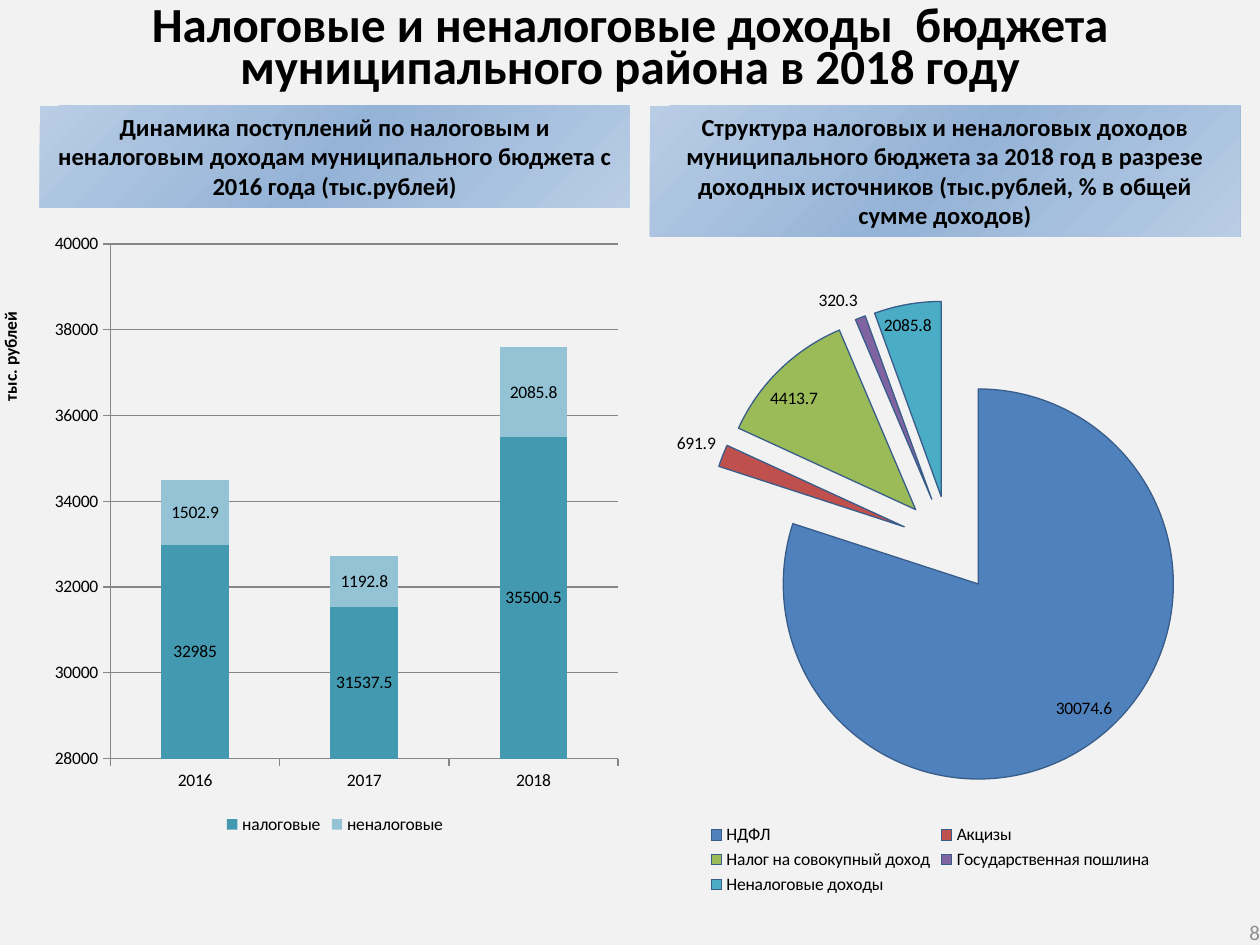
from lxml import etree
from pptx import Presentation
from pptx.chart.data import CategoryChartData
from pptx.dml.color import RGBColor
from pptx.enum.chart import XL_CHART_TYPE, XL_LABEL_POSITION, XL_LEGEND_POSITION, XL_TICK_MARK
from pptx.enum.shapes import MSO_SHAPE
from pptx.enum.text import MSO_ANCHOR, PP_ALIGN
from pptx.oxml import parse_xml
from pptx.oxml.ns import nsdecls, qn
from pptx.util import Cm, Pt

STACKED = XL_CHART_TYPE.COLUMN_STACKED
PIE = XL_CHART_TYPE.PIE
BEST_FIT = XL_LABEL_POSITION.BEST_FIT
LEGEND_BOTTOM = XL_LEGEND_POSITION.BOTTOM
TICK_OUTSIDE = XL_TICK_MARK.OUTSIDE
RECTANGLE = MSO_SHAPE.RECTANGLE
TOP, MIDDLE = MSO_ANCHOR.TOP, MSO_ANCHOR.MIDDLE
CENTER, RIGHT = PP_ALIGN.CENTER, PP_ALIGN.RIGHT

FONT = "Calibri"
BLACK = RGBColor(0x00, 0x00, 0x00)
BACKGROUND = RGBColor(0xF2, 0xF2, 0xF2)
PAGE_GREY = RGBColor(0x8C, 0x8C, 0x8C)
AXIS_GREY = RGBColor(0x86, 0x86, 0x86)
TAX_TEAL = RGBColor(0x43, 0x99, 0xB0)
NON_TAX_TEAL = RGBColor(0x93, 0xC3, 0xD5)
PIE_OUTLINE = RGBColor(0x38, 0x5D, 0x8A)
PIE_COLORS = (
    RGBColor(0x4F, 0x81, 0xBD),
    RGBColor(0xC0, 0x50, 0x4D),
    RGBColor(0x9B, 0xBB, 0x59),
    RGBColor(0x80, 0x64, 0xA2),
    RGBColor(0x4B, 0xAC, 0xC6),
)
BAND_LIGHT = RGBColor(0xB9, 0xCD, 0xE5)
BAND_DARK = RGBColor(0x95, 0xB3, 0xD7)

YEARS = ("2016", "2017", "2018")
INCOME_BY_YEAR = (
    ("налоговые", (32985, 31537.5, 35500.5), TAX_TEAL),
    ("неналоговые", (1502.9, 1192.8, 2085.8), NON_TAX_TEAL),
)
INCOME_BY_SOURCE = {
    "НДФЛ": 30074.6,
    "Акцизы": 691.9,
    "Налог на совокупный доход": 4413.7,
    "Государственная пошлина": 320.3,
    "Неналоговые доходы": 2085.8,
}


def write_text(shape, text, size, color=BLACK, bold=True, alignment=CENTER, anchor=TOP):
    frame = shape.text_frame
    frame.word_wrap = True
    frame.vertical_anchor = anchor
    paragraph = frame.paragraphs[0]
    paragraph.text = text
    paragraph.alignment = alignment
    paragraph.font.name = FONT
    paragraph.font.size = Pt(size)
    paragraph.font.bold = bold
    paragraph.font.color.rgb = color
    return paragraph


def remove_margins(shape):
    frame = shape.text_frame
    frame.margin_left = frame.margin_right = frame.margin_top = frame.margin_bottom = 0


def add_title(slide, left, top, width, height):
    title = slide.shapes.add_textbox(left, top, width, height)
    title.text_frame.margin_top = Cm(0.2)
    paragraph = write_text(title, "Налоговые и неналоговые доходы  бюджета муниципального района в 2018 году", 28)
    paragraph.line_spacing = Pt(24)


def add_heading(slide, text, left, top, width, height):
    band = slide.shapes.add_shape(RECTANGLE, left, top, width, height)
    band.shadow.inherit = False
    band.line.fill.background()
    stops = "".join(
        f'<a:gs pos="{position}"><a:srgbClr val="{color}"/></a:gs>'
        for position, color in ((0, BAND_LIGHT), (50000, BAND_DARK), (100000, BAND_LIGHT))
    )
    gradient = parse_xml(
        f'<a:gradFill {nsdecls("a")}><a:gsLst>{stops}</a:gsLst>'
        '<a:path path="circle"><a:fillToRect l="100000" t="100000"/></a:path></a:gradFill>'
    )
    band.fill.background()
    properties = band.element.spPr
    properties.replace(properties.find(qn("a:noFill")), gradient)
    write_text(band, text, 14)


def add_unit_label(slide, left, top, width, height):
    label = slide.shapes.add_textbox(left, top, width, height)
    label.rotation = 270
    remove_margins(label)
    write_text(label, "тыс. рублей", 10)


def add_page_number(slide, left, top, width, height):
    number = slide.shapes.add_textbox(left, top, width, height)
    remove_margins(number)
    write_text(number, "8", 12, PAGE_GREY, False, RIGHT, MIDDLE)


def place_plot(chart, x, y, w, h):
    plot_area = chart.element.find(".//" + qn("c:plotArea"))
    for layout in plot_area.findall(qn("c:layout")):
        plot_area.remove(layout)
    layout = etree.Element(qn("c:layout"))
    manual = etree.SubElement(layout, qn("c:manualLayout"))
    settings = {"layoutTarget": "inner", "xMode": "edge", "yMode": "edge", "x": x, "y": y, "w": w, "h": h}
    for name, value in settings.items():
        etree.SubElement(manual, qn(f"c:{name}")).set("val", str(value))
    plot_area.insert(0, layout)


def add_chart(slide, kind, data, box, plot_box):
    chart = slide.shapes.add_chart(kind, *box, data).chart
    chart.has_title = False
    chart.font.name = FONT
    chart.font.size = Pt(10)
    chart.font.color.rgb = BLACK
    chart.has_legend = True
    chart.legend.position = LEGEND_BOTTOM
    chart.legend.include_in_layout = False
    plot = chart.plots[0]
    plot.has_data_labels = True
    plot.data_labels.show_value = True
    place_plot(chart, *plot_box)
    return chart


def add_dynamics_chart(slide, *box):
    data = CategoryChartData()
    data.categories = YEARS
    for name, values, _ in INCOME_BY_YEAR:
        data.add_series(name, values)
    chart = add_chart(slide, STACKED, data, box, (0.12, 0.04, 0.86, 0.83))
    plot = chart.plots[0]
    plot.vary_by_categories = False
    plot.gap_width = 150
    plot.overlap = 100
    for series, (_, _, color) in zip(plot.series, INCOME_BY_YEAR):
        series.format.fill.solid()
        series.format.fill.fore_color.rgb = color
    value_axis = chart.value_axis
    value_axis.minimum_scale = 28000
    value_axis.maximum_scale = 40000
    value_axis.major_unit = 2000
    value_axis.has_major_gridlines = True
    for axis in (chart.category_axis, value_axis):
        axis.major_tick_mark = TICK_OUTSIDE
        axis.format.line.color.rgb = AXIS_GREY
    value_axis.major_gridlines.format.line.color.rgb = AXIS_GREY


def add_structure_chart(slide, *box):
    data = CategoryChartData()
    data.categories = INCOME_BY_SOURCE.keys()
    data.add_series("Доходы", INCOME_BY_SOURCE.values())
    chart = add_chart(slide, PIE, data, box, (0.1, 0.07, 0.87, 0.76))
    plot = chart.plots[0]
    plot.vary_by_categories = True
    plot.data_labels.position = BEST_FIT
    series = plot.series[0]
    for index, color in enumerate(PIE_COLORS):
        point = series.points[index].format
        point.fill.solid()
        point.fill.fore_color.rgb = color
        point.line.color.rgb = PIE_OUTLINE
        point.line.width = Pt(0.75)
    explosion = etree.Element(qn("c:explosion"))
    explosion.set("val", "25")
    series._element.find(qn("c:dPt")).addprevious(explosion)


def main():
    presentation = Presentation()
    presentation.slide_width = Cm(25.4)
    presentation.slide_height = Cm(19.05)
    slide = presentation.slides.add_slide(presentation.slide_layouts[6])
    slide.background.fill.solid()
    slide.background.fill.fore_color.rgb = BACKGROUND

    left, right, top, width = Cm(0.8), Cm(13.1), Cm(2.13), Cm(11.9)
    add_title(slide, 0, 0, presentation.slide_width, Cm(2.08))
    add_unit_label(slide, Cm(-1.8), Cm(6.93), Cm(4.09), Cm(0.51))
    add_heading(slide, "Структура налоговых и неналоговых доходов муниципального бюджета за 2018 год "
                "в разрезе доходных источников (тыс.рублей, % в общей сумме доходов)",
                right, top, width, Cm(2.64))
    add_heading(slide, "Динамика поступлений по налоговым и неналоговым доходам муниципального "
                "бюджета с 2016 года (тыс.рублей)", left, top, width, Cm(2.06))
    add_page_number(slide, Cm(19.48), Cm(18.52), Cm(5.92), Cm(0.53))
    add_dynamics_chart(slide, left, Cm(4.42), width, Cm(12.5))
    add_structure_chart(slide, right, Cm(5.13), Cm(11.3), Cm(13))
    presentation.save("out.pptx")


if __name__ == "__main__":
    main()
